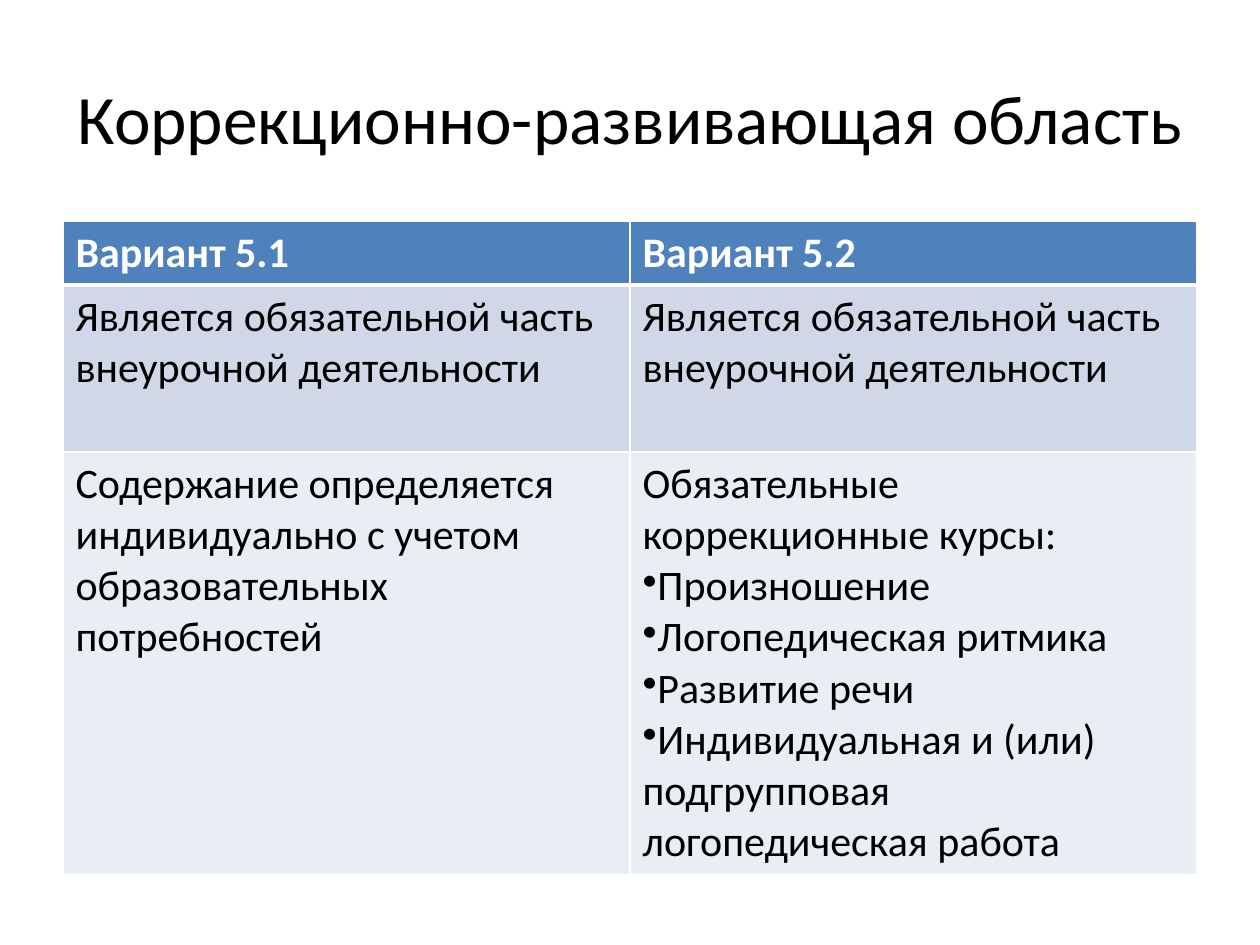
from dataclasses import dataclass

import pptx
import pptx.dml.color
import pptx.enum.text
import pptx.oxml
import pptx.oxml.ns
import pptx.util

EMU_PER_PX = 914400 / 126
FONT = "Calibri"
COLORS = {
    "text": "000000",
    "white": "FFFFFF",
    "header": "4F81BD",
    "band_dark": "D0D8E8",
    "band_light": "E9EDF4",
}


@dataclass(frozen=True)
class Line:
    text: str
    bullet: bool = False


@dataclass(frozen=True)
class Row:
    height: int
    fill: str
    cells: tuple[tuple[Line, ...], ...]
    color: str = "text"
    bold: bool = False
    bottom_border: int = 1


OUTSIDE_CLASS = (Line("Является обязательной часть внеурочной деятельности"),)
ROWS = (
    Row(63, "header", ((Line("Вариант 5.1"),), (Line("Вариант 5.2"),)),
        color="white", bold=True, bottom_border=3),
    Row(167, "band_dark", (OUTSIDE_CLASS, OUTSIDE_CLASS)),
    Row(422, "band_light", (
        (Line("Содержание определяется индивидуально с учетом "
              "образовательных потребностей"),),
        (
            Line("Обязательные коррекционные курсы:"),
            Line("Произношение", bullet=True),
            Line("Логопедическая ритмика", bullet=True),
            Line("Развитие речи", bullet=True),
            Line("Индивидуальная и (или) подгрупповая логопедическая работа",
                 bullet=True),
        ),
    )),
)


def px(length: int) -> int:
    return round(length * EMU_PER_PX)


def rgb(name: str) -> pptx.dml.color.RGBColor:
    return pptx.dml.color.RGBColor.from_string(COLORS[name])


def write(frame, lines: tuple[Line, ...], *, size: float, color: str = "text",
          bold: bool = False, align=pptx.enum.text.PP_ALIGN.LEFT) -> None:
    frame.word_wrap = True
    for index, line in enumerate(lines):
        paragraph = frame.add_paragraph() if index else frame.paragraphs[0]
        paragraph.alignment = align
        if line.bullet:
            mark = pptx.oxml.parse_xml(
                f'<a:buChar {pptx.oxml.ns.nsdecls("a")} char="•"/>')
            paragraph._p.get_or_add_pPr().append(mark)
        run = paragraph.add_run()
        run.text = line.text
        run.font.name = FONT
        run.font.size = pptx.util.Pt(size)
        run.font.bold = bold
        run.font.color.rgb = rgb(color)


def add_borders(cell, top: int, bottom: int) -> None:
    properties = cell._tc.get_or_add_tcPr()
    for side, points in (("L", 1), ("R", 1), ("T", top), ("B", bottom)):
        properties.append(pptx.oxml.parse_xml(
            f'<a:ln{side} {pptx.oxml.ns.nsdecls("a")} w="{pptx.util.Pt(points)}">'
            f'<a:solidFill><a:srgbClr val="{COLORS["white"]}"/></a:solidFill>'
            f'</a:ln{side}>'))


def add_comparison(slide, left: int, top: int, width: int,
                   rows: tuple[Row, ...]) -> None:
    height = sum(row.height for row in rows)
    comparison = slide.shapes.add_table(
        len(rows), len(rows[0].cells), px(left), px(top), px(width), px(height)).table
    top_border = 1
    for row_index, row in enumerate(rows):
        comparison.rows[row_index].height = px(row.height)
        for column_index, lines in enumerate(row.cells):
            cell = comparison.cell(row_index, column_index)
            add_borders(cell, top_border, row.bottom_border)
            cell.fill.solid()
            cell.fill.fore_color.rgb = rgb(row.fill)
            write(cell.text_frame, lines, size=24, color=row.color, bold=row.bold)
        top_border = row.bottom_border


def main() -> None:
    presentation = pptx.Presentation()
    presentation.slide_width = px(1260)
    presentation.slide_height = px(945)
    slide = presentation.slides.add_slide(presentation.slide_layouts[5])

    heading = slide.shapes.title
    heading.left, heading.top = px(63), px(38)
    heading.width, heading.height = px(1134), px(158)
    heading.text_frame.vertical_anchor = pptx.enum.text.MSO_ANCHOR.MIDDLE
    write(heading.text_frame, (Line("Коррекционно-развивающая область"),),
          size=39.6, align=pptx.enum.text.PP_ALIGN.CENTER)

    add_comparison(slide, 63, 221, 1134, ROWS)
    presentation.save("out.pptx")


if __name__ == "__main__":
    main()
